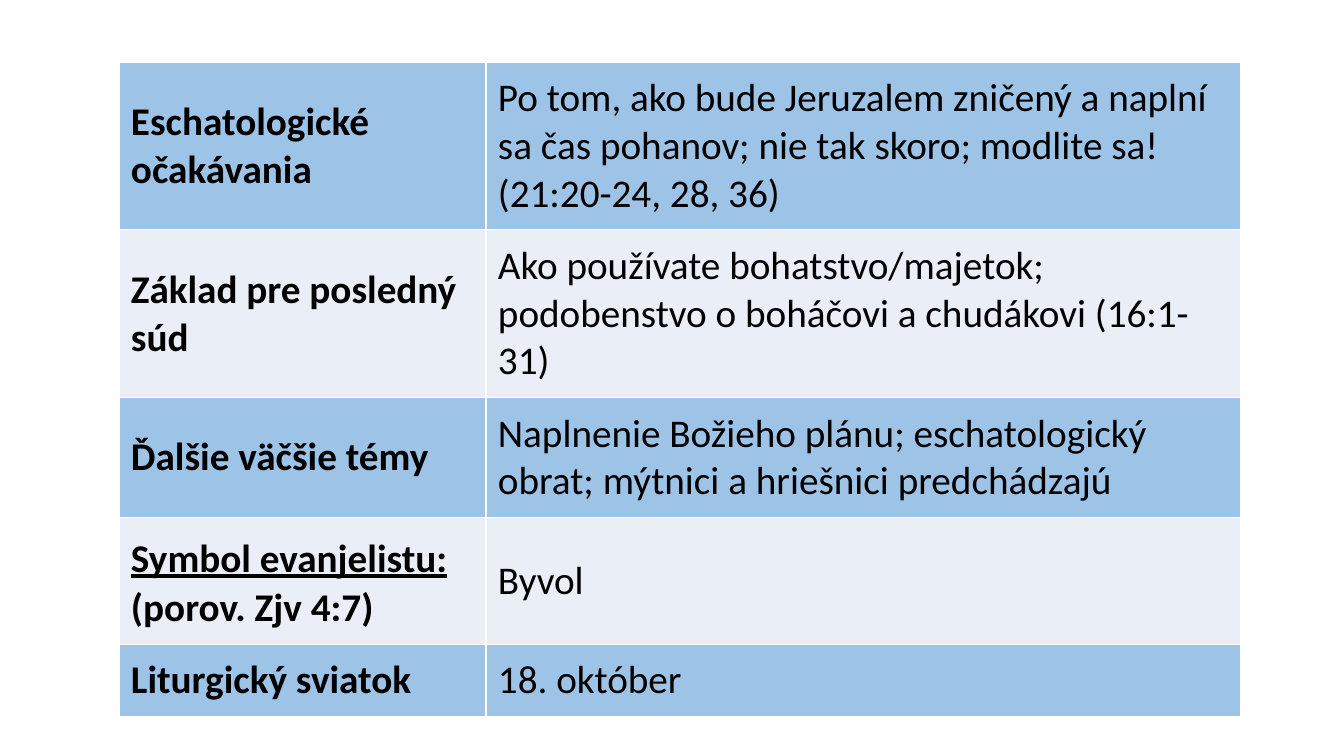
from dataclasses import dataclass

from lxml.etree import SubElement
from pptx import Presentation
from pptx.dml.color import RGBColor as Color
from pptx.enum.text import MSO_ANCHOR as Anchor
from pptx.oxml.ns import qn
from pptx.util import Emu, Pt

EMU_PER_PX = 914400 / 100.8


@dataclass(frozen=True)
class Theme:
    font: str = "Calibri"
    text: str = "000000"
    dark_band: str = "9DC3E6"
    light_band: str = "EAEFF7"
    border: str = "FFFFFF"
    body_size: int = 28
    gap_size: int = 32


THEME = Theme()
PADDING = 12
COLUMN_WIDTHS = (367, 755)
SYMBOL_TITLE = "Symbol evanjelistu:"
SYMBOL_SOURCE = "(porov. Zjv 4:7)"

# Row height, label, description
ROWS = (
    (167, "Eschatologické očakávania",
     "Po tom, ako bude Jeruzalem zničený a naplní sa čas pohanov; "
     "nie tak skoro; modlite sa! (21:20-24, 28, 36)"),
    (168, "Základ pre posledný súd",
     "Ako používate bohatstvo/majetok; podobenstvo o boháčovi "
     "a chudákovi (16:1-31)"),
    (119, "Ďalšie väčšie témy",
     "Naplnenie Božieho plánu; eschatologický obrat; "
     "mýtnici a hriešnici predchádzajú"),
    (126, SYMBOL_TITLE, "Byvol"),
    (72, "Liturgický sviatok", "18. október"),
)


def px(length):
    return Emu(round(length * EMU_PER_PX))


def add_borders(cell):
    properties = cell._tc.get_or_add_tcPr()
    for side in ("lnL", "lnR", "lnT", "lnB"):
        line = SubElement(properties, qn(f"a:{side}"), w=str(Pt(1)))
        fill = SubElement(line, qn("a:solidFill"))
        SubElement(fill, qn("a:srgbClr"), val=THEME.border)


def style_cell(cell, band):
    add_borders(cell)
    cell.fill.solid()
    cell.fill.fore_color.rgb = Color.from_string(band)
    cell.vertical_anchor = Anchor.MIDDLE
    cell.margin_left = cell.margin_right = px(PADDING)
    cell.margin_top = cell.margin_bottom = px(PADDING)


def write_text(cell, text, bold):
    para = cell.text_frame.paragraphs[0]
    para.font.name = THEME.font
    para.font.size = Pt(THEME.body_size)
    para.font.bold = bold
    para.font.color.rgb = Color.from_string(THEME.text)
    span = para.add_run()
    span.text = text
    return para, span


def add_symbol_source(para, title):
    """Underline the title and put its Bible reference on the next line."""
    title.font.underline = True
    gap = para.add_run()
    gap.text = " "
    gap.font.size = Pt(THEME.gap_size)
    para.add_line_break()
    para.add_run().text = SYMBOL_SOURCE


def add_topic_table(page):
    heights = [row[0] for row in ROWS]
    frame = page.shapes.add_table(
        len(ROWS), len(COLUMN_WIDTHS), px(119), px(62),
        px(sum(COLUMN_WIDTHS)), px(sum(heights)))
    table = frame.table
    table.first_row = table.horz_banding = False
    for column, width in zip(table.columns, COLUMN_WIDTHS):
        column.width = px(width)
    for index, (height, label, description) in enumerate(ROWS):
        table.rows[index].height = px(height)
        band = THEME.light_band if index % 2 else THEME.dark_band
        label_cell, description_cell = table.rows[index].cells
        style_cell(label_cell, band)
        style_cell(description_cell, band)
        para, span = write_text(label_cell, label, bold=True)
        if label == SYMBOL_TITLE:
            add_symbol_source(para, span)
        write_text(description_cell, description, bold=False)


def main():
    deck = Presentation()
    deck.slide_width, deck.slide_height = px(1344), px(756)
    page = deck.slides.add_slide(deck.slide_layouts[6])
    add_topic_table(page)
    deck.save("out.pptx")


if __name__ == "__main__":
    main()
